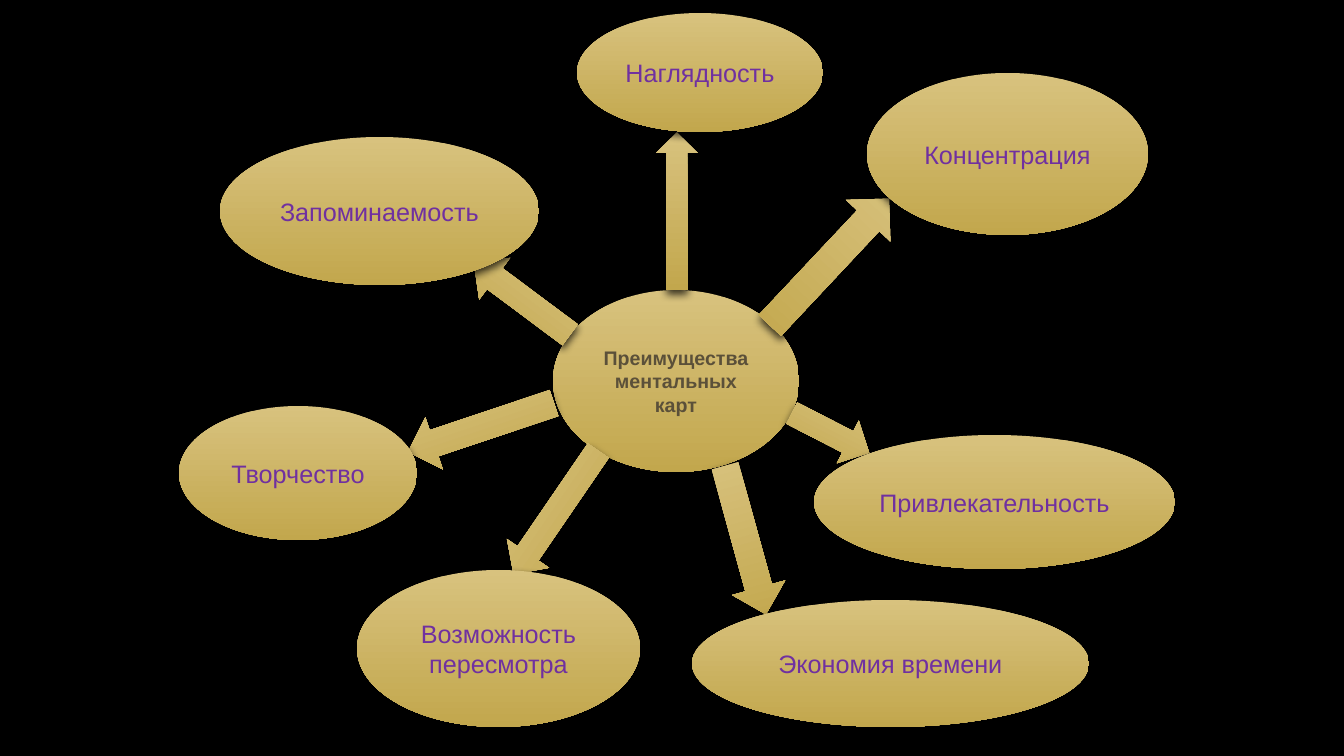
from lxml import etree
from pptx import Presentation
from pptx import util as u
from pptx.dml.color import RGBColor
from pptx.enum import shapes, text
from pptx.oxml.ns import qn

W, H = 1344, 756
SCALE = u.Inches(1) / 100.8
FONT = "Arial"
BLACK = RGBColor(0x00, 0x00, 0x00)
GOLD_TOP = RGBColor(0xD8, 0xC2, 0x7E)
GOLD_BOTTOM = RGBColor(0xC2, 0xA7, 0x4D)
BROWN = RGBColor(0x5B, 0x50, 0x39)
PURPLE = RGBColor(0x70, 0x30, 0xA0)
G = shapes.MSO_SHAPE

CENTER = ("Преимущества ментальных карт", (553, 290, 246, 182))
ARROWS = [
    (G.DOWN_ARROW, (718, 463, 55, 154), 344.6),
    (G.RIGHT_ARROW, (787, 409, 87, 48), 27.2),
    (G.UP_ARROW, (799, 175, 61, 174), 43.2),
    (G.UP_ARROW, (656, 132, 42, 158), 0),
    (G.LEFT_ARROW, (462, 273, 120, 52), 36.7),
    (G.LEFT_ARROW, (404, 400, 154, 55), 341.5),
    (G.LEFT_ARROW, (481, 487, 150, 51), 304.4),
]
BENEFITS = [
    ("Наглядность", (577, 13, 246, 119)),
    ("Концентрация", (867, 73, 281, 162)),
    ("Привлекательность", (814, 435, 361, 134)),
    ("Экономия времени", (692, 600, 397, 127)),
    ("Возможность пересмотра", (357, 570, 283, 157)),
    ("Творчество", (179, 406, 238, 134)),
    ("Запоминаемость", (220, 137, 319, 148)),
]


def px(n):
    return u.Emu(round(n * SCALE))


def add_shadow(sp):
    sp.shadow.inherit = False
    effects = sp._element.spPr.find(qn("a:effectLst"))
    shadow = etree.SubElement(
        effects, qn("a:outerShdw"), blurRad=str(u.Pt(6)), dist=str(u.Pt(3)),
        dir="5400000", rotWithShape="0")
    color = etree.SubElement(shadow, qn("a:srgbClr"), val=str(BLACK))
    etree.SubElement(color, qn("a:alpha"), val="75000")


def add_gold(s, kind, box, rotation=0):
    sp = s.shapes.add_shape(kind, *map(px, box))
    sp.rotation = rotation
    sp.fill.gradient()
    sp.fill.gradient_angle = 270
    for stop, color, at in zip(sp.fill.gradient_stops, (GOLD_TOP, GOLD_BOTTOM), (0, 1)):
        stop.color.rgb = color
        stop.position = at
    sp.line.fill.background()
    add_shadow(sp)
    return sp


def write(sp, words, size=18, color=PURPLE, bold=False):
    tf = sp.text_frame
    tf.word_wrap = True
    tf.vertical_anchor = text.MSO_ANCHOR.MIDDLE
    p = tf.paragraphs[0]
    p.alignment = text.PP_ALIGN.CENTER
    r = p.add_run()
    r.text = words
    r.font.name = FONT
    r.font.size = u.Pt(size)
    r.font.bold = bold
    r.font.color.rgb = color


def main():
    prs = Presentation()
    prs.slide_width, prs.slide_height = px(W), px(H)
    s = prs.slides.add_slide(prs.slide_layouts[6])
    s.background.fill.solid()
    s.background.fill.fore_color.rgb = BLACK

    words, box = CENTER
    write(add_gold(s, G.OVAL, box), words, size=14, color=BROWN, bold=True)
    for kind, box, rotation in ARROWS:
        add_gold(s, kind, box, rotation)
    for words, box in BENEFITS:
        write(add_gold(s, G.OVAL, box), words)

    prs.save("out.pptx")


if __name__ == "__main__":
    main()
